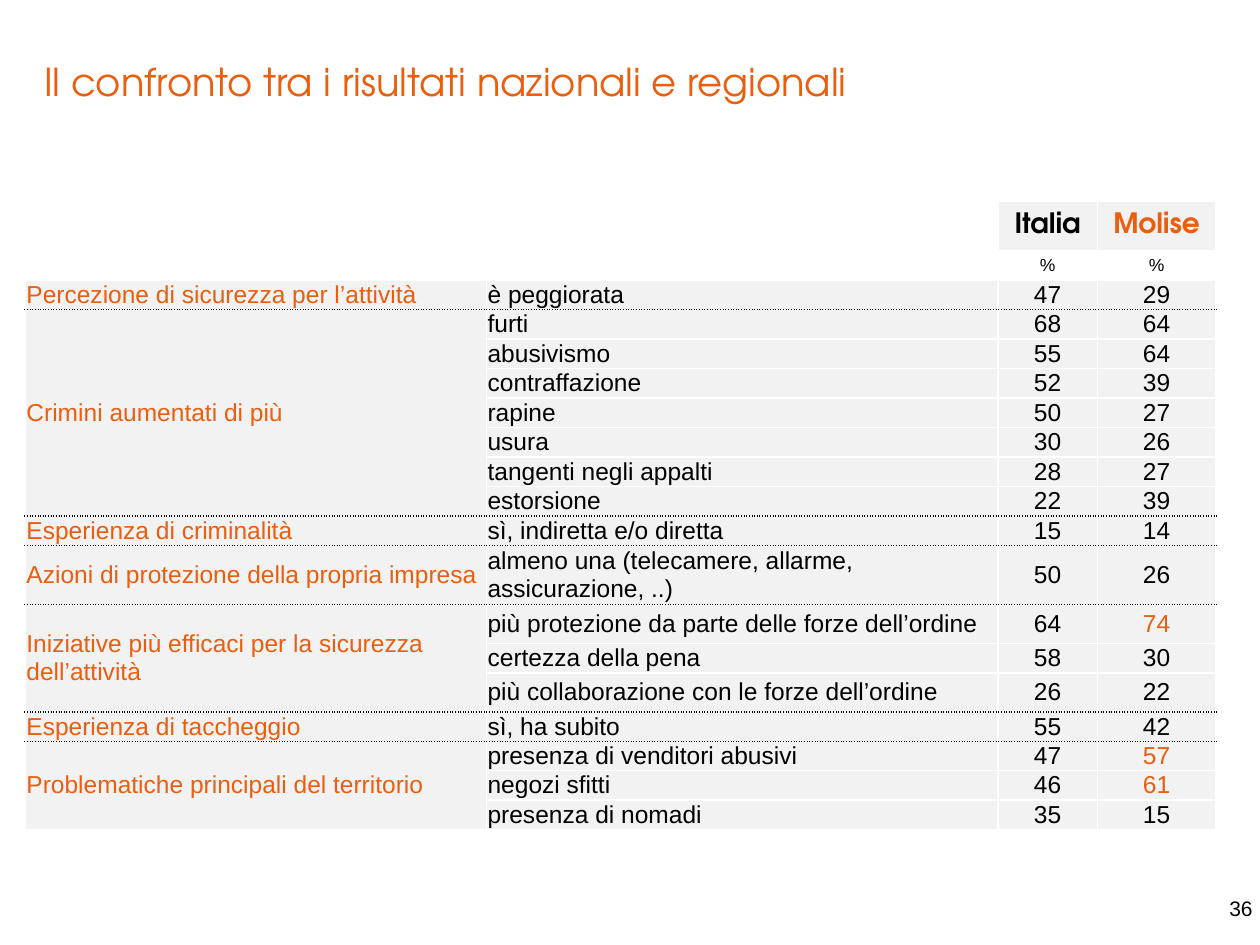
from lxml import etree
from pptx import Presentation
from pptx.dml.color import RGBColor
from pptx.enum.text import MSO_ANCHOR, PP_ALIGN
from pptx.oxml.ns import qn
from pptx.util import Inches, Pt

LEFT, CENTER, RIGHT = PP_ALIGN.LEFT, PP_ALIGN.CENTER, PP_ALIGN.RIGHT
MIDDLE, BOTTOM = MSO_ANCHOR.MIDDLE, MSO_ANCHOR.BOTTOM
ORANGE, BLACK, WHITE, GREY = "E95E0F", "000000", "FFFFFF", "F2F2F2"
HEADING_FONT, BODY_FONT = "TeX Gyre Adventor", "Arial"
NO_STYLE = "{2D5ABB26-0587-4C30-8999-92F81FD0307C}"

# Content: topic, then its answers with the Italia and Molise percentages
TITLE = "Il confronto tra i risultati nazionali e regionali"
PAGE_NUMBER = "36"
REGIONS = [("Italia", BLACK), ("Molise", ORANGE)]
TOPICS = [
    ("Percezione di sicurezza per l’attività", [("è peggiorata", 47, 29)]),
    ("Crimini aumentati di più", [
        ("furti", 68, 64),
        ("abusivismo", 55, 64),
        ("contraffazione", 52, 39),
        ("rapine", 50, 27),
        ("usura", 30, 26),
        ("tangenti negli appalti", 28, 27),
        ("estorsione", 22, 39),
    ]),
    ("Esperienza di criminalità", [("sì, indiretta e/o diretta", 15, 14)]),
    ("Azioni di protezione della propria impresa", [
        ("almeno una (telecamere, allarme, assicurazione, ..)", 50, 26),
    ]),
    ("Iniziative più efficaci per la sicurezza dell’attività", [
        ("più protezione da parte delle forze dell’ordine", 64, 74),
        ("certezza della pena", 58, 30),
        ("più collaborazione con le forze dell’ordine", 26, 22),
    ]),
    ("Esperienza di taccheggio", [("sì, ha subito", 55, 42)]),
    ("Problematiche principali del territorio", [
        ("presenza di venditori abusivi", 47, 57),
        ("negozi sfitti", 46, 61),
        ("presenza di nomadi", 35, 15),
    ]),
]
HIGHLIGHTED = {74, 57, 61}  # Molise values shown in orange

COLUMN_WIDTHS = [3.66, 4.06, 0.79, 0.94]
ROW_HEIGHT = 0.23
SPECIAL_HEIGHTS = {0: 0.39, 1: 0.14, 8: 0.21, 9: 0.21, 11: 0.33, 12: 0.31, 14: 0.31}
HEADER_ROWS = 2


def rgb(value):
    return RGBColor.from_string(value)


def write(frame, text, size, color, font=BODY_FONT, bold=False, align=LEFT):
    paragraph = frame.paragraphs[0]
    paragraph.alignment = align
    run = paragraph.add_run()
    run.text = text
    run.font.size, run.font.name, run.font.bold = Pt(size), font, bold
    run.font.color.rgb = rgb(color)


def add_text(box, text, size, color, font=BODY_FONT, align=LEFT, inset=None):
    frame = slide.shapes.add_textbox(*map(Inches, box)).text_frame
    frame.word_wrap = True
    frame.vertical_anchor = BOTTOM
    if inset is not None:
        frame.margin_left = frame.margin_right = Inches(inset)
        frame.margin_top = frame.margin_bottom = Inches(inset)
    write(frame, text, size, color, font, align=align)


def set_borders(cell, dotted_top=False, dotted_bottom=False):
    sides = {"L": False, "R": False, "T": dotted_top, "B": dotted_bottom}
    properties = cell._tc.get_or_add_tcPr()
    for position, (side, dotted) in enumerate(sides.items()):
        line = etree.Element(qn(f"a:ln{side}"), w=str(Pt(1)))
        fill = etree.SubElement(line, qn("a:solidFill"))
        etree.SubElement(fill, qn("a:srgbClr"), val=BLACK if dotted else WHITE)
        etree.SubElement(line, qn("a:prstDash"), val="sysDot" if dotted else "solid")
        properties.insert(position, line)


def fill_cell(cell, text, size, color, **style):
    cell.fill.solid()
    cell.fill.fore_color.rgb = rgb(GREY)
    write(cell.text_frame, text, size, color, **style)


presentation = Presentation()
presentation.slide_width, presentation.slide_height = Inches(10), Inches(7.5)
slide = presentation.slides.add_slide(presentation.slide_layouts[6])

# Page number and title
add_text((6.82, 6.82, 3.22, 0.54), PAGE_NUMBER, 12, BLACK, align=RIGHT)
add_text((0.35, 0.12, 8.35, 0.71), TITLE, 22, ORANGE, HEADING_FONT, inset=0)

# Table grid
row_count = HEADER_ROWS + sum(len(answers) for _, answers in TOPICS)
heights = [SPECIAL_HEIGHTS.get(row, ROW_HEIGHT) for row in range(row_count)]
table = slide.shapes.add_table(
    row_count, len(COLUMN_WIDTHS), Inches(0.2), Inches(1.6),
    Inches(sum(COLUMN_WIDTHS)), Inches(sum(heights))).table
table.first_row = table.horz_banding = False
table._tbl.tblPr.find(qn("a:tableStyleId")).text = NO_STYLE
for column, width in zip(table.columns, COLUMN_WIDTHS):
    column.width = Inches(width)
for row, height in zip(table.rows, heights):
    row.height = Inches(height)
for cell in table.iter_cells():
    cell.margin_left = cell.margin_right = Inches(0.01)
    cell.margin_top = cell.margin_bottom = 0
    cell.vertical_anchor = MIDDLE
    cell.fill.background()
    # Keeps the empty cells as low as the rows of body text
    etree.SubElement(cell.text_frame.paragraphs[0]._p, qn("a:endParaRPr"), sz="1400")

# Region headings and units
for column, (region, color) in enumerate(REGIONS, start=2):
    heading, unit = table.cell(0, column), table.cell(1, column)
    fill_cell(heading, region, 16, color, font=HEADING_FONT, bold=True, align=CENTER)
    write(unit.text_frame, "%", 10, BLACK, align=CENTER)
    set_borders(heading)
    set_borders(unit)

# Topics, with dotted rules between them
row = HEADER_ROWS
for topic, answers in TOPICS:
    first, last = row, row + len(answers) - 1
    rule_above, rule_below = first > HEADER_ROWS, last < row_count - 1
    topic_cell = table.cell(first, 0)
    if last > first:
        topic_cell.merge(table.cell(last, 0))
    fill_cell(topic_cell, topic, 14, ORANGE)
    set_borders(topic_cell, rule_above, rule_below)
    for answer, italia, molise in answers:
        molise_color = ORANGE if molise in HIGHLIGHTED else BLACK
        entries = [(answer, BLACK, LEFT), (str(italia), BLACK, CENTER),
                   (str(molise), molise_color, CENTER)]
        for column, (text, color, align) in enumerate(entries, start=1):
            cell = table.cell(row, column)
            fill_cell(cell, text, 14, color, align=align)
            set_borders(cell, rule_above and row == first, rule_below and row == last)
        row += 1

presentation.save("out.pptx")
